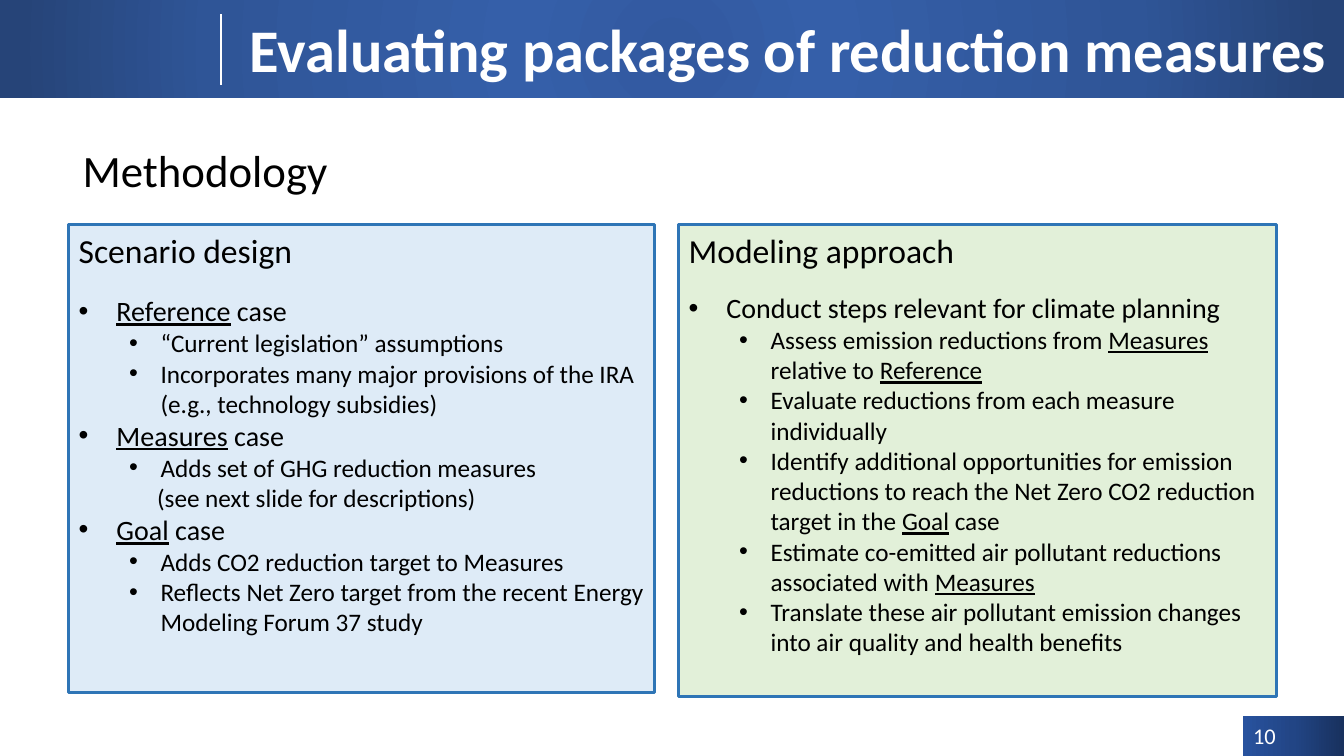
import pptx
import pptx.util
import pptx.dml.color
import pptx.enum.shapes
import pptx.enum.text
import pptx.oxml
import pptx.oxml.ns

Pt = pptx.util.Pt
RGB = pptx.dml.color.RGBColor
ANCHOR = pptx.enum.text.MSO_ANCHOR

BLACK = RGB(0, 0, 0)
WHITE = RGB(255, 255, 255)
EDGE = RGB(0x2E, 0x75, 0xB6)
BLUE = RGB(0xDE, 0xEB, 0xF7)
GREEN = RGB(0xE2, 0xF0, 0xD9)
BAND = [(0, RGB(0x32, 0x59, 0x9F)), (23, RGB(0x35, 0x5F, 0xA9)),
        (69, RGB(0x2F, 0x55, 0x97)), (97, RGB(0x26, 0x44, 0x78))]
BADGE = [(0, RGB(0x18, 0x31, 0x5E)), (50, RGB(0x22, 0x45, 0x85)),
         (100, RGB(0x28, 0x52, 0x9E))]
ROUND = ('<a:path path="circle"><a:fillToRect l="50000" t="50000" '
         'r="50000" b="50000"/></a:path>')
LEFTWARD = '<a:lin ang="10800000" scaled="0"/>'

# Kind of line: size, level, left margin, indent (points), bullet
KINDS = {
    "head": (24, 0, 0, 0, False),
    "main": (20, 0, 27, -27, True),
    "sub": (18, 1, 58.5, -22.5, True),
    "note": (18, 1, 56, 0, False),
}

SCENE = [
    ("head", "Scenario design"),
    ("main", "_Reference_ case"),
    ("sub", "“Current legislation” assumptions"),
    ("sub", "Incorporates many major provisions of the IRA "
            "(e.g., technology subsidies)"),
    ("main", "_Measures_ case"),
    ("sub", "Adds set of GHG reduction measures"),
    ("note", "(see next slide for descriptions)"),
    ("main", "_Goal_ case"),
    ("sub", "Adds CO2 reduction target to Measures"),
    ("sub", "Reflects Net Zero target from the recent Energy "
            "Modeling Forum 37 study"),
]
MODEL = [
    ("head", "Modeling approach"),
    ("main", "Conduct steps relevant for climate planning"),
    ("sub", "Assess emission reductions from _Measures_ relative to "
            "_Reference_"),
    ("sub", "Evaluate reductions from each measure individually"),
    ("sub", "Identify additional opportunities for emission reductions to "
            "reach the Net Zero CO2 reduction target in the _Goal_ case"),
    ("sub", "Estimate co-emitted air pollutant reductions associated with "
            "_Measures_"),
    ("sub", "Translate these air pollutant emission changes into air "
            "quality and health benefits"),
]


class Deck:
    """Holds the style and the slide; all places are percent of its size."""

    font = "Calibri"

    def __init__(self):
        self.show = pptx.Presentation()
        self.show.slide_width = pptx.util.Inches(13.333)
        self.show.slide_height = pptx.util.Inches(7.5)
        self.slide = self.show.slides.add_slide(self.show.slide_layouts[3])
        self.shapes = self.slide.shapes

    def scale(self, *shares):
        """Turn x, y, x, y... percents into lengths."""
        sides = (self.show.slide_width, self.show.slide_height)
        return [round(s * sides[i % 2] / 100) for i, s in enumerate(shares)]

    def place(self, shape, spot):
        shape.left, shape.top, shape.width, shape.height = self.scale(*spot)

    def frame(self, shape, anchor=ANCHOR.TOP):
        frame = shape.text_frame
        frame.word_wrap = True
        frame.auto_size = pptx.enum.text.MSO_AUTO_SIZE.NONE
        frame.vertical_anchor = anchor
        return frame

    def letter(self, para, text, size, color=BLACK, bold=False, space=1):
        """Add the text run by run; parts between underscores are underlined."""
        para.alignment = pptx.enum.text.PP_ALIGN.LEFT
        para.line_spacing = space
        para.space_before = Pt(0)
        for i, part in enumerate(text.split("_")):
            if part:
                run = para.add_run()
                run.text = part
                font = run.font
                font.name, font.size, font.bold = self.font, Pt(size), bold
                font.color.rgb = color
                font.underline = i % 2 == 1

    def block(self, spot, stops, shade):
        """Add a rectangle with a colour blend, behind all else."""
        box = self.shapes.add_shape(
            pptx.enum.shapes.MSO_SHAPE.RECTANGLE, *self.scale(*spot))
        box.shadow.inherit = False
        box.line.fill.background()
        marks = "".join(f'<a:gs pos="{pos * 1000}"><a:srgbClr val="{color}"/></a:gs>'
                        for pos, color in stops)
        blend = pptx.oxml.parse_xml(
            f'<a:gradFill {pptx.oxml.ns.nsdecls("a")} rotWithShape="1">'
            f'<a:gsLst>{marks}</a:gsLst>{shade}</a:gradFill>')
        geom = box._element.spPr.find(pptx.oxml.ns.qn("a:prstGeom"))
        geom.addnext(blend)
        self.shapes._spTree.insert(2, box._element)
        return box

    def rule(self, *ends):
        line = self.shapes.add_connector(
            pptx.enum.shapes.MSO_CONNECTOR.STRAIGHT, *self.scale(*ends))
        line.line.color.rgb = WHITE
        line.line.width = Pt(1)
        line._element.spPr.append(pptx.oxml.parse_xml(
            f'<a:effectLst {pptx.oxml.ns.nsdecls("a")}/>'))

    def title(self, spot, text):
        shape = self.shapes.title
        self.place(shape, spot)
        frame = self.frame(shape, ANCHOR.MIDDLE)
        self.letter(frame.paragraphs[0], text, 43.2, WHITE, True, 0.9)

    def label(self, spot, text, size):
        box = self.shapes.add_textbox(*self.scale(*spot))
        frame = self.frame(box)
        self.letter(frame.paragraphs[0], text, size, space=0.9)

    def badge(self, spot, text):
        box = self.block(spot, BADGE, LEFTWARD)
        frame = self.frame(box, ANCHOR.MIDDLE)
        self.letter(frame.paragraphs[0], text, 16, WHITE)

    def panel(self, index, spot, color, lines, gap):
        """Fill a body placeholder; gap is the space under its heading."""
        shape = self.slide.placeholders[index]
        self.place(shape, spot)
        shape.fill.solid()
        shape.fill.fore_color.rgb = color
        shape.line.color.rgb = EDGE
        shape.line.width = Pt(2.25)
        frame = self.frame(shape)
        frame.margin_right = pptx.util.Inches(0.08)
        for i, (kind, text) in enumerate(lines):
            para = frame.add_paragraph() if i else frame.paragraphs[0]
            size, para.level, *dent = KINDS[kind]
            self.bullet(para, *dent)
            self.letter(para, text, size)
            if i == 1:
                para.space_before = Pt(gap)

    def bullet(self, para, margin, indent, dot):
        props = para._p.get_or_add_pPr()
        props.set("marL", str(Pt(margin)))
        props.set("indent", str(Pt(indent)))
        space = pptx.oxml.ns.nsdecls("a")
        marks = ([f'<a:buFont {space} typeface="Arial"/>',
                  f'<a:buChar {space} char="•"/>'] if dot
                 else [f'<a:buNone {space}/>'])
        for mark in marks:
            props.append(pptx.oxml.parse_xml(mark))


def main():
    deck = Deck()
    deck.block((0, 0, 100, 12.93), BAND, ROUND)
    deck.rule(16.43, 1.87, 16.43, 11.2)
    deck.badge((92.5, 94.67, 7.5, 5.33), "10")
    deck.title((17.85, 1.07, 82.15, 11.73),
               "Evaluating packages of reduction measures")
    deck.label((5.4, 19.07, 90, 8), "Methodology", 32)
    deck.panel(1, (5.1, 29.73, 43.59, 61.87), BLUE, SCENE, 17)
    deck.panel(2, (50.49, 29.73, 44.49, 62.4), GREEN, MODEL, 14.6)
    deck.show.save("out.pptx")


if __name__ == "__main__":
    main()
